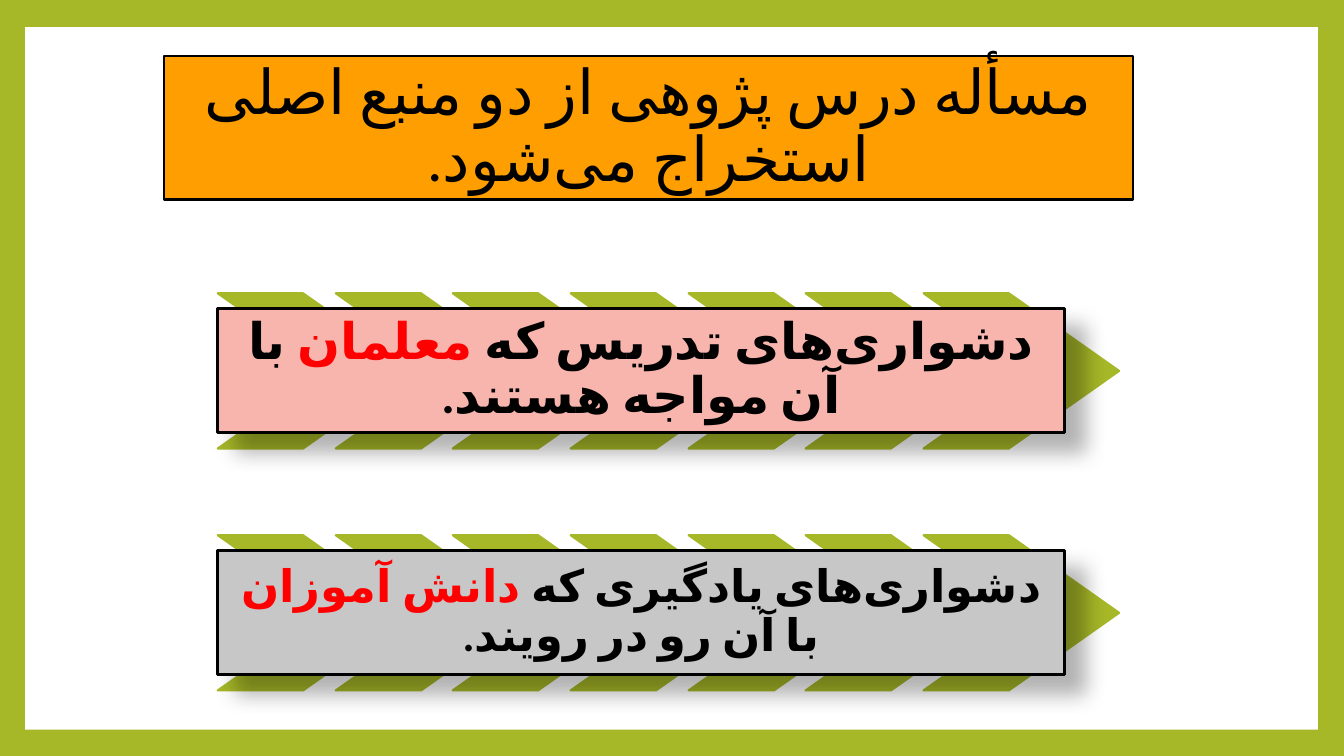
"""Build a slide naming the two main sources of a lesson-study problem."""
from dataclasses import dataclass

from lxml.etree import SubElement
from pptx import Presentation
from pptx.dml.color import RGBColor
from pptx.enum.shapes import MSO_SHAPE
from pptx.enum.text import MSO_ANCHOR, PP_ALIGN
from pptx.oxml.ns import qn
from pptx.shapes.autoshape import Shape
from pptx.slide import Slide
from pptx.util import Emu, Pt

PX = 9144
FONT = "Calibri"
NON_JOINER = chr(0x200C)
BLACK = RGBColor(0x00, 0x00, 0x00)
WHITE = RGBColor(0xFF, 0xFF, 0xFF)
RED = RGBColor(0xFF, 0x00, 0x00)
GREEN = RGBColor(0xA6, 0xB7, 0x27)
ORANGE = RGBColor(0xFE, 0x9E, 0x00)
PINK = RGBColor(0xF7, 0xB5, 0xAD)
GRAY = RGBColor(0xC7, 0xC7, 0xC8)

BAND_LEFT = 216
CHEVRON_COUNT = 7
CHEVRON_SPAN = 700
CHEVRON_WIDTH = 194
CHEVRON_HEIGHT = 154
BOX_OFFSET = 15


@dataclass(frozen=True)
class Area:
    """Position and size in px."""

    left: int
    top: int
    width: int
    height: int


@dataclass(frozen=True)
class Span:
    """A piece of text in one colour."""

    text: str
    color: RGBColor = BLACK


@dataclass(frozen=True)
class Source:
    """A source of problems: a text box over a band of chevrons."""

    top: int
    fill: RGBColor
    size: int
    inset: int
    spans: tuple[Span, ...]


TITLE = (
    Span(f"مسأله درس پژوهی از دو منبع اصلی استخراج می{NON_JOINER}شود."),
)
SOURCES = (
    Source(291, PINK, 36, 10, (
        Span(f"دشواری{NON_JOINER}های تدریس که "),
        Span("معلمان ", RED),
        Span("با آن مواجه هستند."),
    )),
    Source(531, GRAY, 32, 9, (
        Span(f"دشواری{NON_JOINER}های یادگیری که "),
        Span("دانش آموزان ", RED),
        Span("با آن رو در رویند."),
    )),
)


def px(length: int) -> Emu:
    """Turn px into EMU."""
    return Emu(length * PX)


def add_block(page: Slide, kind: MSO_SHAPE, area: Area, fill: RGBColor,
              line: RGBColor | None = None, weight: float = 1.5) -> Shape:
    """Draw a filled shape without a shadow."""
    block = page.shapes.add_shape(
        kind, px(area.left), px(area.top), px(area.width), px(area.height))
    block.shadow.inherit = False
    block.fill.solid()
    block.fill.fore_color.rgb = fill
    if line is None:
        block.line.fill.background()
    else:
        block.line.color.rgb = line
        block.line.width = Pt(weight)
    return block


def write(box: Shape, spans: tuple[Span, ...], size: int, bold: bool) -> None:
    """Write one centred right-to-left paragraph."""
    frame = box.text_frame
    frame.word_wrap = True
    frame.vertical_anchor = MSO_ANCHOR.MIDDLE
    para = frame.paragraphs[0]
    para.alignment = PP_ALIGN.CENTER
    para.line_spacing = 0.9
    para._p.get_or_add_pPr().set("rtl", "1")
    for span in spans:
        run = para.add_run()
        run.text = span.text
        run.font.name = FONT
        run.font.size = Pt(size)
        run.font.bold = bold
        run.font.color.rgb = span.color
        properties = run._r.get_or_add_rPr()
        properties.set("lang", "fa-IR")
        SubElement(properties, qn("a:cs"), typeface=FONT)


def add_shadow(box: Shape) -> None:
    """Cast a soft shadow down and to the right."""
    effects = box._element.spPr.find(qn("a:effectLst"))
    shadow = SubElement(effects, qn("a:outerShdw"), blurRad=str(Pt(15)),
                        dist=str(Pt(18)), dir="2700000", algn="tl",
                        rotWithShape="0")
    color = SubElement(shadow, qn("a:srgbClr"), val=str(BLACK))
    SubElement(color, qn("a:alpha"), val="30000")


def add_source(page: Slide, source: Source) -> None:
    """Draw the chevrons of a source and its text box."""
    for index in range(CHEVRON_COUNT):
        left = BAND_LEFT + round(CHEVRON_SPAN * index / (CHEVRON_COUNT - 1))
        area = Area(left, source.top, CHEVRON_WIDTH, CHEVRON_HEIGHT)
        chevron = add_block(page, MSO_SHAPE.CHEVRON, area, GREEN, GREEN)
        chevron.adjustments[0] = 0.71
    area = Area(BAND_LEFT, source.top + BOX_OFFSET, 840, 123)
    box = add_block(page, MSO_SHAPE.RECTANGLE, area, source.fill, BLACK, 2.25)
    add_shadow(box)
    frame = box.text_frame
    frame.margin_left = frame.margin_right = px(source.inset)
    frame.margin_top = frame.margin_bottom = px(source.inset)
    write(box, source.spans, source.size, True)


def main() -> None:
    """Build and save the deck."""
    deck = Presentation()
    deck.slide_width = px(1333)
    deck.slide_height = px(750)
    page = deck.slides.add_slide(deck.slide_layouts[6])
    page.background.fill.solid()
    page.background.fill.fore_color.rgb = GREEN
    add_block(page, MSO_SHAPE.RECTANGLE, Area(25, 27, 1282, 697), WHITE)
    title = add_block(page, MSO_SHAPE.RECTANGLE, Area(163, 56, 961, 142),
                      ORANGE, BLACK)
    write(title, TITLE, 44, False)
    for source in SOURCES:
        add_source(page, source)
    deck.save("out.pptx")


if __name__ == "__main__":
    main()
